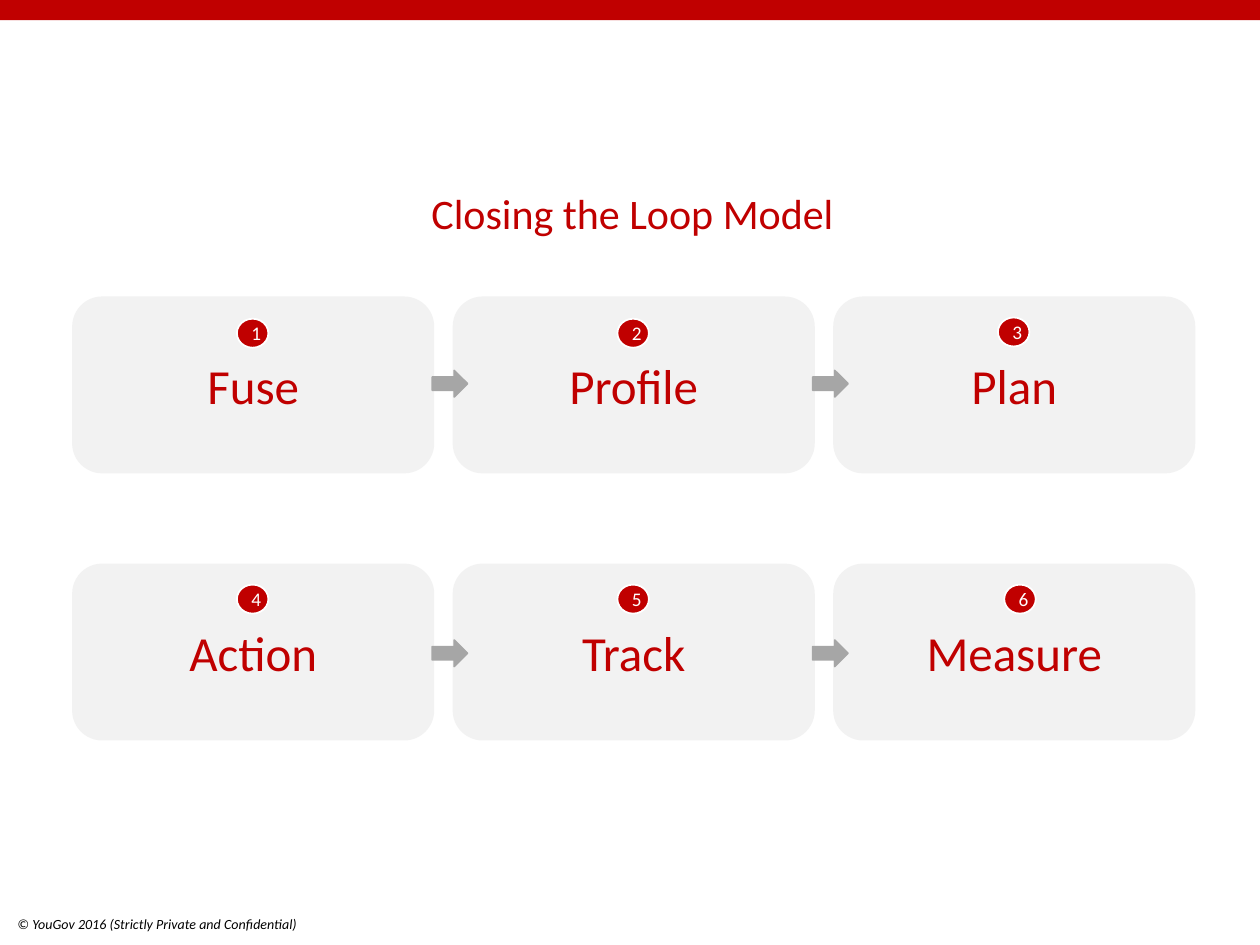
from dataclasses import dataclass

from pptx import Presentation
from pptx.dml.color import RGBColor as RGB
from pptx.enum.shapes import MSO_SHAPE as SHAPE
from pptx.enum.text import MSO_ANCHOR as ANCHOR, PP_ALIGN as ALIGN
from pptx.util import Inches, Pt


@dataclass(frozen=True)
class Theme:
    """Colours, font and type sizes of the slide."""
    font: str = "Calibri"
    red: str = "C00000"
    panel: str = "F2F2F2"
    arrow: str = "A6A6A6"
    white: str = "FFFFFF"
    black: str = "000000"
    title_size: int = 24
    step_size: int = 28
    badge_size: int = 11
    footer_size: int = 8


THEME = Theme()
STEPS = (("Fuse", "Profile", "Plan"), ("Action", "Track", "Measure"))
LEFT, PITCH, CARD_W, CARD_H = 0.58, 3.02, 2.86, 1.39
CARD_TOPS = (2.36, 4.48)
ARROW_TOPS = (2.94, 5.08)
BADGE_TOPS = ((2.53, 2.53, 2.52), (4.64, 4.64, 4.64))
BADGE_LEFTS = ((1.88, 4.9, 7.92), (1.88, 4.9, 7.97))


def write(tf, text, size, color, align=ALIGN.CENTER, italic=False):
    """Put one styled paragraph in a text frame."""
    tf.word_wrap = True
    p = tf.paragraphs[0]
    p.text = text
    p.alignment = align
    p.font.name = THEME.font
    p.font.size = Pt(size)
    p.font.italic = italic
    p.font.color.rgb = RGB.from_string(color)


def add_box(s, box, text, size, color, **style):
    """Add a text box."""
    tb = s.shapes.add_textbox(*map(Inches, box))
    write(tb.text_frame, text, size, color, **style)


def add_shape(s, kind, box, fill, line=None):
    """Add a flat preset shape, outlined if a line colour is given."""
    sp = s.shapes.add_shape(kind, *map(Inches, box))
    sp.shadow.inherit = False
    sp.fill.solid()
    sp.fill.fore_color.rgb = RGB.from_string(fill)
    if line:
        sp.line.color.rgb = RGB.from_string(line)
        sp.line.width = Pt(1)
    else:
        sp.line.fill.background()
    return sp


def add_label_shape(s, kind, box, fill, line, text, size, color):
    """Add a preset shape with centred text."""
    tf = add_shape(s, kind, box, fill, line).text_frame
    tf.vertical_anchor = ANCHOR.MIDDLE
    write(tf, text, size, color)


def add_card(s, row, col):
    """Add the panel that names one step."""
    box = (LEFT + col * PITCH, CARD_TOPS[row], CARD_W, CARD_H)
    add_label_shape(s, SHAPE.ROUNDED_RECTANGLE, box, THEME.panel, THEME.panel,
                    STEPS[row][col], THEME.step_size, THEME.red)


def add_badge(s, row, col):
    """Add the number of one step."""
    box = (BADGE_LEFTS[row][col], BADGE_TOPS[row][col], 0.25, 0.23)
    number = row * len(STEPS[row]) + col + 1
    add_label_shape(s, SHAPE.OVAL, box, THEME.red, THEME.white,
                    str(number), THEME.badge_size, THEME.white)


def add_arrow(s, row, col):
    """Add the arrow that leads from one step to the next."""
    box = (3.43 + col * PITCH, ARROW_TOPS[row], 0.28, 0.21)
    add_shape(s, SHAPE.RIGHT_ARROW, box, THEME.arrow, THEME.arrow)


def main():
    """Build and save the slide."""
    prs = Presentation()
    prs.slide_width, prs.slide_height = Inches(10), Inches(7.5)
    s = prs.slides.add_slide(prs.slide_layouts[6])
    add_shape(s, SHAPE.RECTANGLE, (0, 0, 10, 0.16), THEME.red)
    add_box(s, (0.02, 1.44, 10, 0.5), "Closing the Loop Model",
            THEME.title_size, THEME.red)
    for row, names in enumerate(STEPS):
        for col in range(len(names)):
            add_card(s, row, col)
            add_badge(s, row, col)
        for col in range(len(names) - 1):
            add_arrow(s, row, col)
    add_box(s, (0.04, 7.22, 4.12, 0.24),
            "© YouGov 2016 (Strictly Private and Confidential)",
            THEME.footer_size, THEME.black, align=ALIGN.LEFT, italic=True)
    prs.save("out.pptx")


if __name__ == "__main__":
    main()
